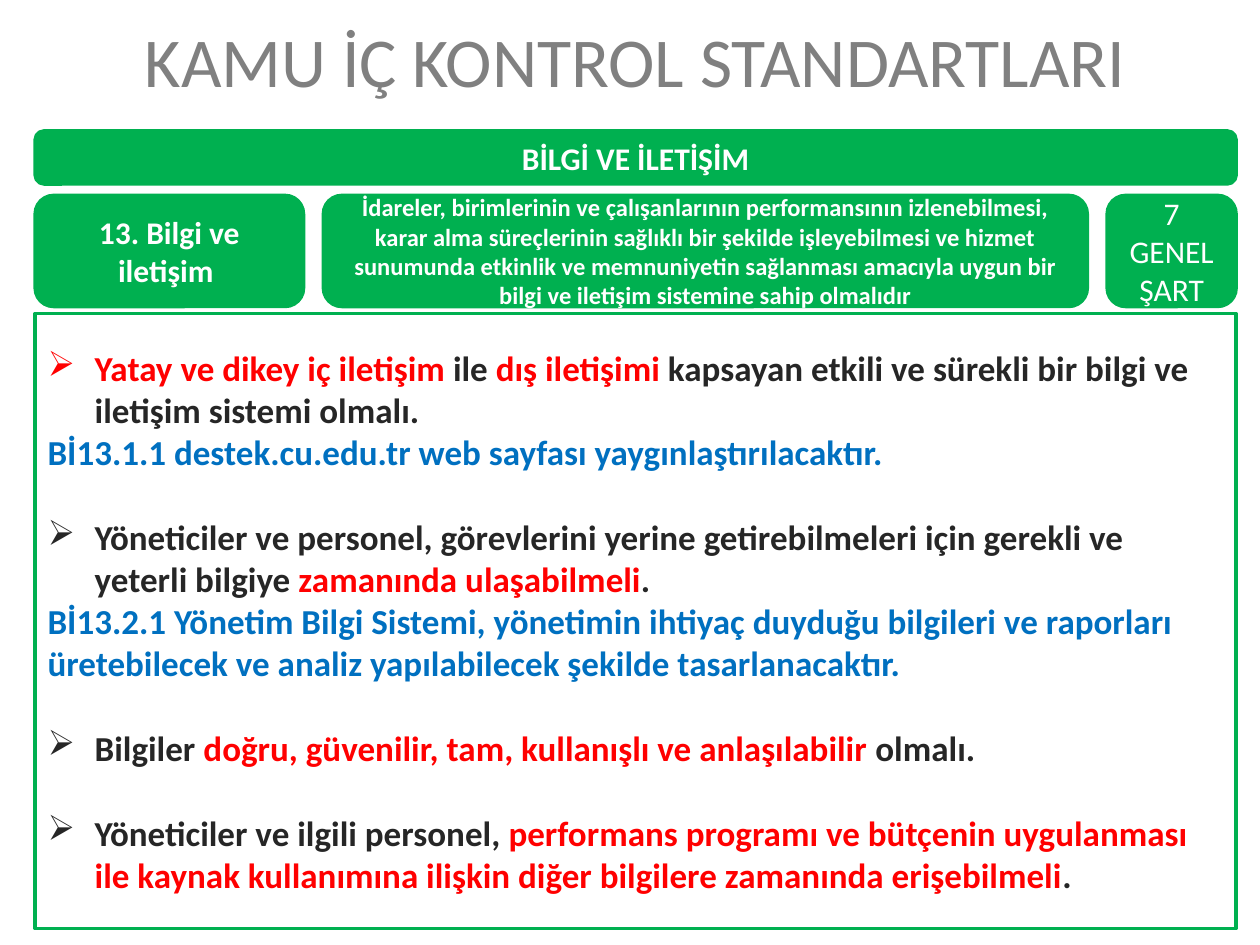
from lxml.etree import SubElement
from pptx import Presentation
from pptx.dml.color import RGBColor
from pptx.enum.shapes import MSO_SHAPE as Shape
from pptx.enum.text import MSO_ANCHOR as Anchor, PP_ALIGN as Align
from pptx.oxml.ns import qn
from pptx.util import Cm, Pt

GREEN, WHITE, GRAY = "00B050", "FFFFFF", "808080"
RED, DARK, BLUE = "FF0000", "262626", "0070C0"
LINE_GAP = 24.4

REQUIREMENTS = [
    (True, 0, [("Yatay ve dikey iç iletişim ", RED), ("ile ", DARK), ("dış iletişimi ", RED),
               ("kapsayan etkili ve sürekli bir bilgi ve iletişim sistemi olmalı.", DARK)]),
    (False, 0, [("Bİ13.1.1 destek.cu.edu.tr web sayfası yaygınlaştırılacaktır.", BLUE)]),
    (True, LINE_GAP, [("Yöneticiler ve personel, görevlerini yerine getirebilmeleri için "
                       "gerekli ve yeterli bilgiye ", DARK),
                      ("zamanında ulaşabilmeli", RED), (".", DARK)]),
    (False, 0, [("Bİ13.2.1 Yönetim Bilgi Sistemi, yönetimin ihtiyaç duyduğu bilgileri ve raporları "
                 "üretebilecek ve analiz yapılabilecek şekilde tasarlanacaktır.", BLUE)]),
    (True, LINE_GAP, [("Bilgiler ", DARK),
                      ("doğru, güvenilir, tam, kullanışlı ve anlaşılabilir ", RED),
                      ("olmalı.", DARK)]),
    (True, LINE_GAP, [("Yöneticiler ve ilgili personel, ", DARK),
                      ("performans programı ve bütçenin uygulanması ile kaynak kullanımına "
                       "ilişkin diğer bilgilere zamanında erişebilmeli", RED), (".", DARK)]),
]

STANDARD = ("İdareler, birimlerinin ve çalışanlarının performansının izlenebilmesi, karar alma "
            "süreçlerinin sağlıklı bir şekilde işleyebilmesi ve hizmet sunumunda etkinlik ve "
            "memnuniyetin sağlanması amacıyla uygun bir bilgi ve iletişim sistemine sahip olmalıdır")


def color(value):
    return RGBColor.from_string(value)


def add_span(para, text, size=18, fill=WHITE, bold=True):
    span = para.add_run()
    span.text = text
    span.font.name = "Calibri"
    span.font.size = Pt(size)
    span.font.bold = bold
    span.font.color.rgb = color(fill)


def add_centered(box, text, **style):
    box.text_frame.word_wrap = True
    box.text_frame.vertical_anchor = Anchor.MIDDLE
    para = box.text_frame.paragraphs[0]
    para.alignment = Align.CENTER
    add_span(para, text, **style)


def add_panel(page, kind, left, top, width, height, fill=GREEN):
    panel = page.shapes.add_shape(kind, Cm(left), Cm(top), Cm(width), Cm(height))
    panel.shadow.inherit = False
    panel.fill.solid()
    panel.fill.fore_color.rgb = color(fill)
    panel.line.color.rgb = color(GREEN)
    panel.line.width = Pt(2)
    return panel


def add_bullet(para):
    properties = para._p.get_or_add_pPr()
    properties.set("marL", str(Cm(0.95)))
    properties.set("indent", str(-Cm(0.95)))
    SubElement(properties, qn("a:buChar")).set("char", "➢")


def add_title(page, left, top, width, height):
    box = page.shapes.add_textbox(Cm(left), Cm(top), Cm(width), Cm(height))
    add_centered(box, "KAMU İÇ KONTROL STANDARTLARI", size=40, fill=GRAY, bold=False)


def add_header(page, left, top, width, height):
    banner = add_panel(page, Shape.ROUNDED_RECTANGLE, left, top, width, 1.07)
    add_centered(banner, "BİLGİ VE İLETİŞİM")
    gap, name_width, count_width = 0.4, 5.41, 2.6
    row_height = 2.24
    cards = [
        (name_width, "13. Bilgi ve iletişim ", {}),
        (width - name_width - count_width - 2 * gap, STANDARD, {"size": 14}),
        (count_width, "7 GENEL ŞART", {"bold": False}),
    ]
    card_left = left
    for card_width, text, style in cards:
        card = add_panel(page, Shape.ROUNDED_RECTANGLE, card_left, top + height - row_height,
                         card_width, row_height)
        add_centered(card, text, **style)
        card_left += card_width + gap


def add_requirements(page, left, top, width, height):
    panel = add_panel(page, Shape.RECTANGLE, left, top, width, height, fill=WHITE)
    frame = panel.text_frame
    frame.word_wrap = True
    frame.vertical_anchor = Anchor.MIDDLE
    for index, (bulleted, space, spans) in enumerate(REQUIREMENTS):
        para = frame.add_paragraph() if index else frame.paragraphs[0]
        para.alignment = Align.LEFT
        if space:
            para.space_before = Pt(space)
        if bulleted:
            add_bullet(para)
        for text, fill in spans:
            add_span(para, text, size=20, fill=fill)


def main():
    deck = Presentation()
    deck.slide_width, deck.slide_height = Cm(25.4), Cm(19.05)
    page = deck.slides.add_slide(deck.slide_layouts[6])
    add_title(page, 0.36, 0, 24.89, 2.39)
    add_header(page, 0.71, 2.64, 24.21, 3.54)
    add_requirements(page, 0.71, 6.32, 24.21, 12.4)
    deck.save("out.pptx")


if __name__ == "__main__":
    main()
